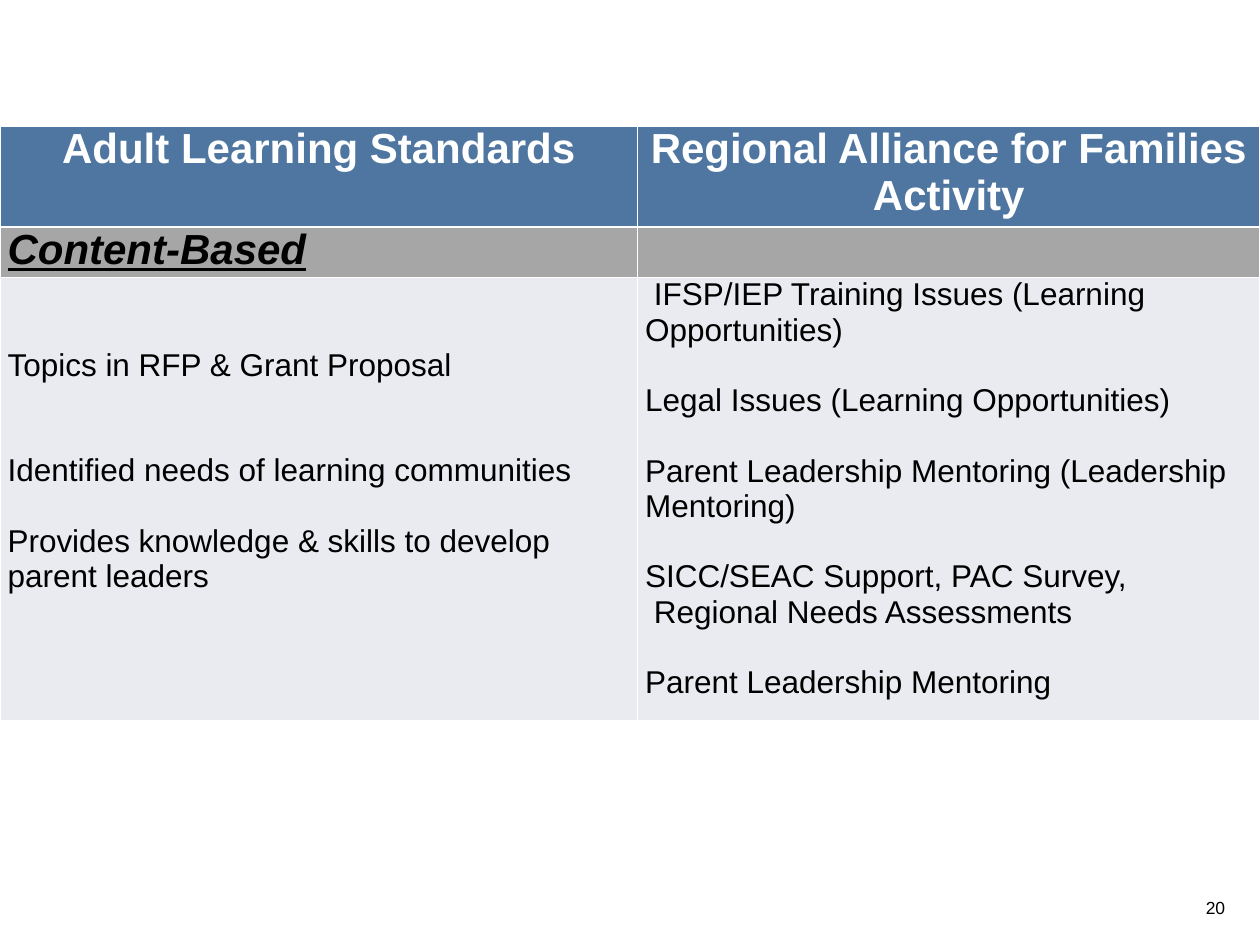
from dataclasses import dataclass

from lxml.etree import SubElement
from pptx import Presentation
from pptx.dml.color import RGBColor
from pptx.enum.text import MSO_ANCHOR, PP_ALIGN
from pptx.oxml.ns import qn
from pptx.util import Inches, Pt

COLORS = {
    "header": "4E76A0",
    "section": "A6A6A6",
    "body": "E9EBF0",
    "white": "FFFFFF",
    "black": "000000",
}
FONT = "Arial"
BODY_LINE = 20.1
COL_WIDTHS = (5.06, 4.94)
ROW_HEIGHTS = (0.74, 0.37, 3.36)


@dataclass(frozen=True)
class Line:
    text: str
    blank_lines: int = 0
    first_indent: float = 0


@dataclass(frozen=True)
class Style:
    fill: str
    size: int
    color: str = "black"
    bold: bool = False
    italic: bool = False
    underline: bool = False
    align: PP_ALIGN = PP_ALIGN.LEFT


@dataclass(frozen=True)
class CellText:
    lines: tuple[Line, ...]
    top_lines: int = 0


HEADER = Style("header", 24, "white", bold=True, align=PP_ALIGN.CENTER)
SECTION = Style("section", 24, bold=True, italic=True, underline=True)
BODY = Style("body", 18)

ROWS = (
    (HEADER, (
        CellText((Line("Adult Learning Standards"),)),
        CellText((Line("Regional Alliance for Families Activity"),)),
    )),
    (SECTION, (
        CellText((Line("Content-Based"),)),
        CellText((Line(""),)),
    )),
    (BODY, (
        CellText((
            Line("Topics in RFP & Grant Proposal"),
            Line("Identified needs of learning communities", 2),
            Line("Provides knowledge & skills to develop parent leaders", 1),
        ), top_lines=2),
        CellText((
            Line("IFSP/IEP Training Issues (Learning Opportunities)", first_indent=0.07),
            Line("Legal Issues (Learning Opportunities)", 1),
            Line("Parent Leadership Mentoring (Leadership Mentoring)", 1),
            Line("SICC/SEAC Support, PAC Survey,", 1),
            Line("Regional Needs Assessments", first_indent=0.07),
            Line("Parent Leadership Mentoring", 1),
        )),
    )),
)


def rgb(name: str) -> RGBColor:
    return RGBColor.from_string(COLORS[name])


def add_borders(cell) -> None:
    tcPr = cell._tc.get_or_add_tcPr()
    for side in ("a:lnL", "a:lnR", "a:lnT", "a:lnB"):
        ln = SubElement(tcPr, qn(side), w=str(Pt(1)))
        fill = SubElement(ln, qn("a:solidFill"))
        SubElement(fill, qn("a:srgbClr"), val=COLORS["white"])


def fill_cell(cell, content: CellText, style: Style) -> None:
    cell.margin_left = cell.margin_right = Inches(0.06)
    cell.margin_top = Pt(content.top_lines * BODY_LINE)
    cell.margin_bottom = 0
    add_borders(cell)
    cell.fill.solid()
    cell.fill.fore_color.rgb = rgb(style.fill)
    tf = cell.text_frame
    tf.text = "\n".join(line.text for line in content.lines)
    for p, line in zip(tf.paragraphs, content.lines):
        p.alignment = style.align
        if line.blank_lines:
            p.space_before = Pt(line.blank_lines * BODY_LINE)
        if line.first_indent:
            p._p.get_or_add_pPr().set("indent", str(Inches(line.first_indent)))
        for r in p.runs:
            f = r.font
            f.name, f.size = FONT, Pt(style.size)
            f.bold, f.italic, f.underline = style.bold, style.italic, style.underline
            f.color.rgb = rgb(style.color)


def add_standards_table(slide) -> None:
    table = slide.shapes.add_table(
        len(ROW_HEIGHTS), len(COL_WIDTHS), Inches(0), Inches(1),
        Inches(sum(COL_WIDTHS)), Inches(sum(ROW_HEIGHTS)),
    ).table
    table.first_row = table.horz_banding = False
    for col, width in zip(table.columns, COL_WIDTHS):
        col.width = Inches(width)
    for row, height, (style, contents) in zip(table.rows, ROW_HEIGHTS, ROWS):
        row.height = Inches(height)
        for cell, content in zip(row.cells, contents):
            fill_cell(cell, content, style)


def add_page_number(slide, number: str) -> None:
    sp = slide.shapes.add_textbox(Inches(9.57), Inches(7.12), Inches(0.17), Inches(0.17))
    tf = sp.text_frame
    tf.margin_left = tf.margin_right = tf.margin_top = tf.margin_bottom = 0
    tf.word_wrap = False
    tf.vertical_anchor = MSO_ANCHOR.BOTTOM
    tf.text = number
    f = tf.paragraphs[0].runs[0].font
    f.name, f.size = FONT, Pt(10)
    f.color.rgb = rgb("black")


def main() -> None:
    prs = Presentation()
    prs.slide_width, prs.slide_height = Inches(10), Inches(7.5)
    slide = prs.slides.add_slide(prs.slide_layouts[6])
    add_page_number(slide, "20")
    add_standards_table(slide)
    prs.save("out.pptx")


if __name__ == "__main__":
    main()
